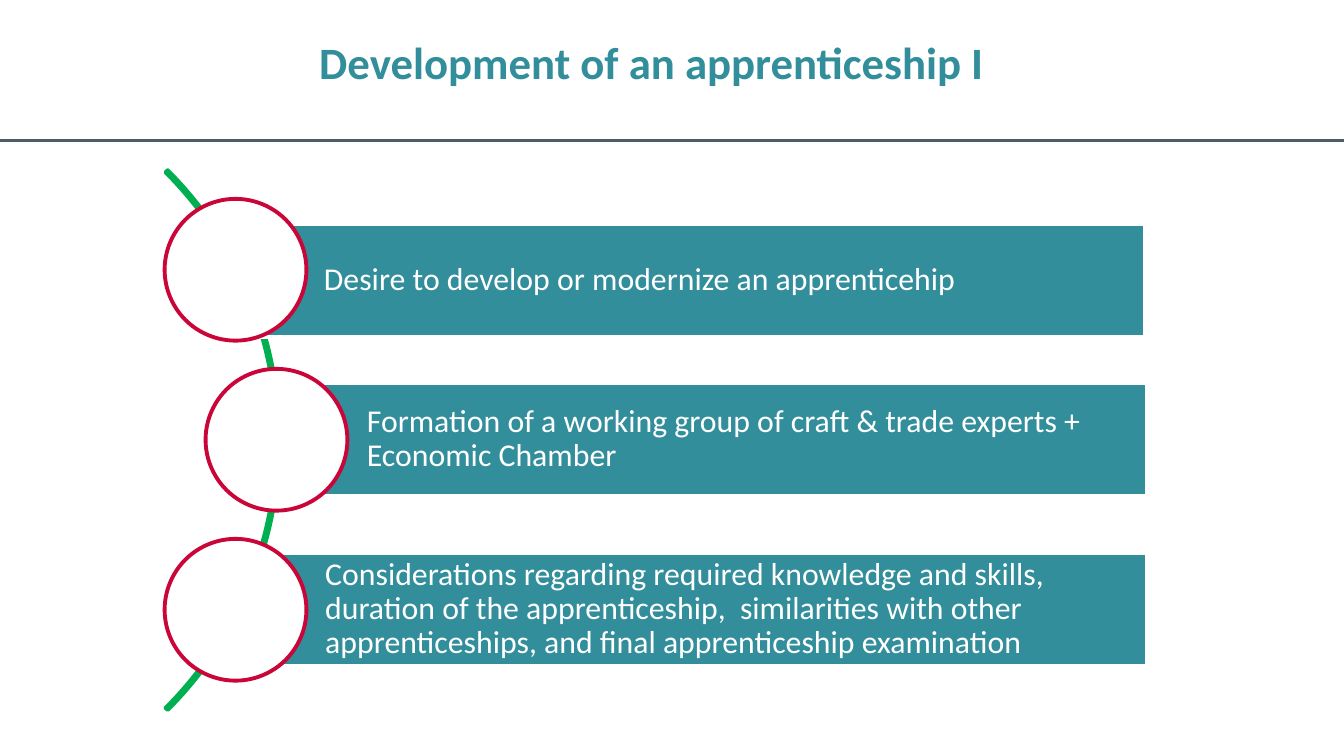
from dataclasses import dataclass

from lxml import etree
from pptx import Presentation
from pptx.dml.color import RGBColor
from pptx.enum.shapes import MSO_CONNECTOR, MSO_SHAPE
from pptx.enum.text import MSO_ANCHOR, PP_ALIGN
from pptx.oxml.ns import qn
from pptx.shapes.autoshape import Shape
from pptx.slide import Slide
from pptx.util import Emu, Pt

RECTANGLE = MSO_SHAPE.RECTANGLE
OVAL = MSO_SHAPE.OVAL
BLOCK_ARC = MSO_SHAPE.BLOCK_ARC
STRAIGHT = MSO_CONNECTOR.STRAIGHT
TOP = MSO_ANCHOR.TOP
MIDDLE = MSO_ANCHOR.MIDDLE
LEFT = PP_ALIGN.LEFT

PIXEL = 4572
SLIDE_WIDTH, SLIDE_HEIGHT = 2000, 1125
RULE_TOP = 209
BAR_HEIGHT = 168
CIRCLE_SIZE = 211
FIRST_CIRCLE_TOP, CIRCLE_STEP = 296, 253
BAR_MARGINS = (134, 10, 10, 10)


@dataclass(frozen=True)
class Theme:
    font: str = "Calibri"
    teal: str = "338E9C"
    white: str = "FFFFFF"
    green: str = "00B050"
    red: str = "CA0538"
    slate: str = "4C5D68"
    title_size: int = 24
    body_size: int = 17
    rule_width: float = 1.5
    outline_width: float = 2.08


@dataclass(frozen=True)
class Box:
    left: int
    top: int
    width: int
    height: int


@dataclass(frozen=True)
class Step:
    text: str
    bar_left: int
    bar_top: int
    bar_width: int
    circle_left: int


THEME = Theme()

STEPS = (
    Step("Desire to develop or modernize an apprenticehip", 348, 333, 1356, 245),
    Step(
        "Formation of a working group of craft & trade experts + Economic Chamber",
        412, 570, 1295, 306,
    ),
    Step(
        "Considerations regarding required knowledge and skills, duration of the "
        "apprenticeship,  similarities with other apprenticeships, and final "
        "apprenticeship examination",
        350, 823, 1357, 245,
    ),
)


def px(value: int) -> Emu:
    return Emu(value * PIXEL)


def color(value: str) -> RGBColor:
    return RGBColor.from_string(value)


def add_box(slide: Slide, kind: MSO_SHAPE, box: Box, fill: str | None, line: str) -> Shape:
    shape = slide.shapes.add_shape(
        kind, px(box.left), px(box.top), px(box.width), px(box.height)
    )
    shape.shadow.inherit = False
    if fill is None:
        shape.fill.background()
    else:
        shape.fill.solid()
        shape.fill.fore_color.rgb = color(fill)
    shape.line.color.rgb = color(line)
    shape.line.width = Pt(THEME.outline_width)
    return shape


def write_text(
    shape: Shape,
    text: str,
    *,
    size: int,
    ink: str,
    spacing: float | Pt,
    bold: bool = False,
    wrap: bool = True,
    anchor: MSO_ANCHOR = TOP,
    margins: tuple[int, int, int, int] = (0, 0, 0, 0),
) -> None:
    frame = shape.text_frame
    frame.word_wrap = wrap
    frame.vertical_anchor = anchor
    frame.margin_left, frame.margin_top, frame.margin_right, frame.margin_bottom = map(
        px, margins
    )
    paragraph = frame.paragraphs[0]
    paragraph.alignment = LEFT
    paragraph.line_spacing = spacing
    run = paragraph.add_run()
    run.text = text
    run.font.name = THEME.font
    run.font.size = Pt(size)
    run.font.bold = bold
    run.font.color.rgb = color(ink)


def add_rule(slide: Slide) -> None:
    rule = slide.shapes.add_connector(
        STRAIGHT, px(SLIDE_WIDTH), px(RULE_TOP), px(0), px(RULE_TOP)
    )
    rule.line.color.rgb = color(THEME.slate)
    rule.line.width = Pt(THEME.rule_width)
    etree.SubElement(rule._element.spPr, qn("a:effectLst"))


def add_arc(slide: Slide) -> None:
    arc = add_box(slide, BLOCK_ARC, Box(-720, 87, 1136, 1136), None, THEME.green)
    for index, value in enumerate((189, 27, 0.004)):
        arc.adjustments[index] = value


def add_step(slide: Slide, step: Step, circle_top: int) -> None:
    bar_box = Box(step.bar_left, step.bar_top, step.bar_width, BAR_HEIGHT)
    bar = add_box(slide, RECTANGLE, bar_box, THEME.teal, THEME.white)
    write_text(
        bar, step.text, size=THEME.body_size, ink=THEME.white, spacing=0.9,
        anchor=MIDDLE, margins=BAR_MARGINS,
    )
    circle_box = Box(step.circle_left, circle_top, CIRCLE_SIZE, CIRCLE_SIZE)
    add_box(slide, OVAL, circle_box, THEME.white, THEME.red)


def add_title(slide: Slide) -> None:
    title = slide.shapes.add_textbox(px(475), px(49), px(1050), px(136))
    write_text(
        title, "Development of an apprenticeship I", size=THEME.title_size,
        ink=THEME.teal, spacing=Pt(30), bold=True, wrap=False,
    )


def main() -> None:
    presentation = Presentation()
    presentation.slide_width = px(SLIDE_WIDTH)
    presentation.slide_height = px(SLIDE_HEIGHT)
    slide = presentation.slides.add_slide(presentation.slide_layouts[6])
    add_rule(slide)
    add_arc(slide)
    for index, step in enumerate(STEPS):
        add_step(slide, step, FIRST_CIRCLE_TOP + index * CIRCLE_STEP)
    add_title(slide)
    presentation.save("out.pptx")


if __name__ == "__main__":
    main()
